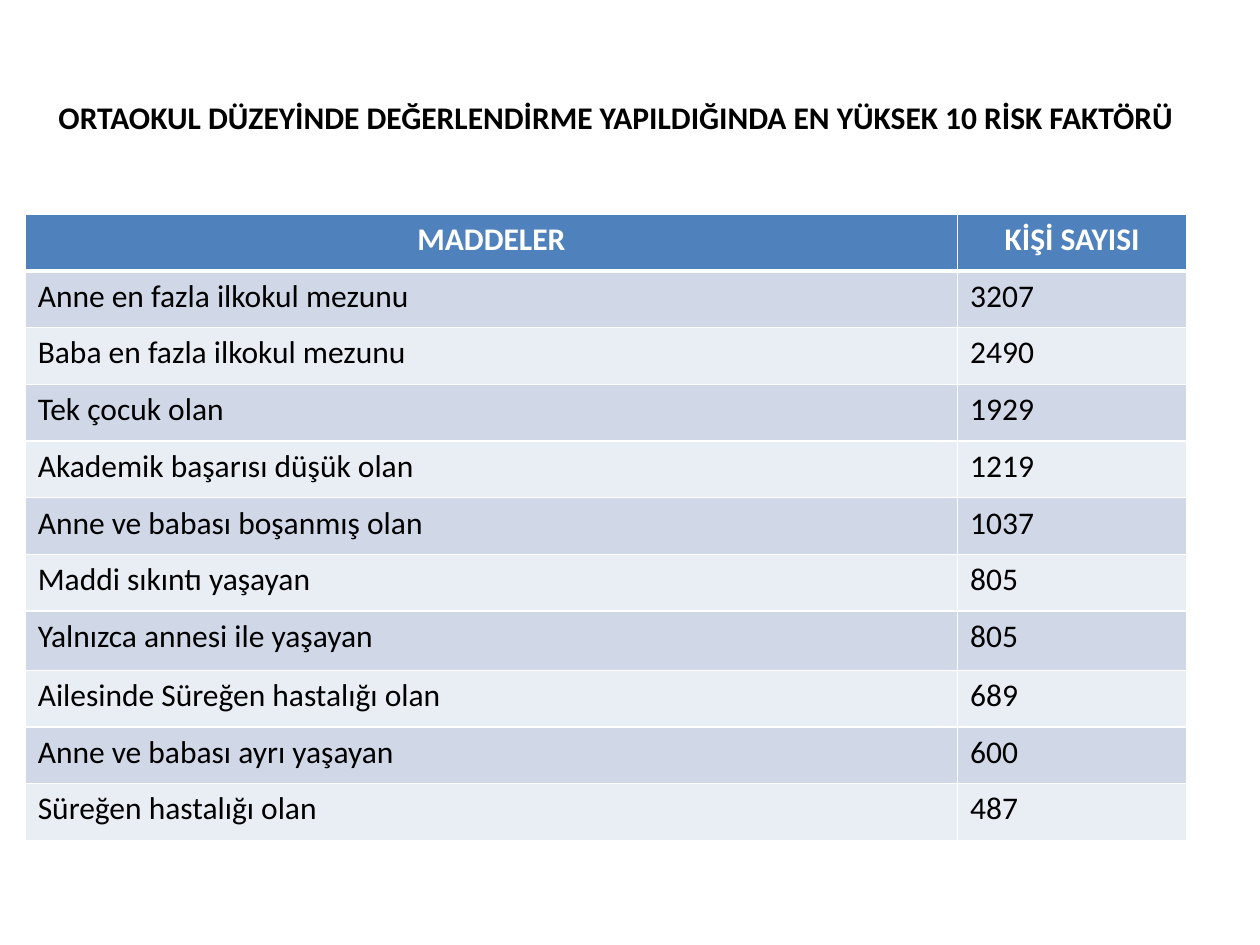
from dataclasses import dataclass

from lxml import etree
from pptx import Presentation
from pptx.dml.color import RGBColor
from pptx.enum import text
from pptx.oxml import ns
from pptx.util import Emu, Pt

EMU_PER_PX = 9144  # 100 px to the inch

WHITE = RGBColor(0xFF, 0xFF, 0xFF)
BLACK = RGBColor(0x00, 0x00, 0x00)
HEADER_BLUE = RGBColor(0x4F, 0x81, 0xBD)
BAND_DARK = RGBColor(0xD0, 0xD8, 0xE8)
BAND_LIGHT = RGBColor(0xE9, 0xED, 0xF4)

FONT = "Calibri"
TITLE = "ORTAOKUL DÜZEYİNDE DEĞERLENDİRME YAPILDIĞINDA EN YÜKSEK 10 RİSK FAKTÖRÜ"
HEADINGS = ("MADDELER", "KİŞİ SAYISI")
COLUMN_WIDTHS = (740, 182)
ROW_HEIGHT = 45


@dataclass(frozen=True)
class RiskFactor:
    label: str
    people: int
    height: int = ROW_HEIGHT


RISK_FACTORS = (
    RiskFactor("Anne en fazla ilkokul mezunu", 3207),
    RiskFactor("Baba en fazla ilkokul mezunu", 2490),
    RiskFactor("Tek çocuk olan", 1929),
    RiskFactor("Akademik başarısı düşük olan", 1219),
    RiskFactor("Anne ve babası boşanmış olan", 1037),
    RiskFactor("Maddi sıkıntı yaşayan", 805),
    RiskFactor("Yalnızca annesi ile yaşayan", 805, height=47),
    RiskFactor("Ailesinde Süreğen hastalığı olan", 689),
    RiskFactor("Anne ve babası ayrı yaşayan", 600),
    RiskFactor("Süreğen hastalığı olan", 487),
)


def px(length: int) -> Emu:
    return Emu(length * EMU_PER_PX)


def write(frame, words: str, *, size: int = 18, color: RGBColor = BLACK,
          bold: bool = False, align=text.PP_ALIGN.LEFT) -> None:
    paragraph = frame.paragraphs[0]
    paragraph.alignment = align
    run = paragraph.add_run()
    run.text = words
    run.font.name = FONT
    run.font.size = Pt(size)
    run.font.bold = bold
    run.font.color.rgb = color


def set_borders(cell, bottom: int = 1) -> None:
    """Draw white borders of 1 pt, with the bottom one as wide as given."""
    properties = cell._tc.get_or_add_tcPr()
    widths = {"a:lnL": 1, "a:lnR": 1, "a:lnT": 1, "a:lnB": bottom}
    for position, (side, width) in enumerate(widths.items()):
        line = etree.Element(ns.qn(side), w=str(Pt(width)))
        fill = etree.SubElement(line, ns.qn("a:solidFill"))
        etree.SubElement(fill, ns.qn("a:srgbClr"), val=str(WHITE))
        properties.insert(position, line)


def fill_cell(cell, words: str, fill: RGBColor, *, bottom: int = 1, **style) -> None:
    cell.fill.solid()
    cell.fill.fore_color.rgb = fill
    set_borders(cell, bottom)
    write(cell.text_frame, words, **style)


def add_title(slide) -> None:
    title = slide.shapes.add_textbox(px(28), px(30), px(922), px(125))
    frame = title.text_frame
    frame.word_wrap = True
    frame.vertical_anchor = text.MSO_ANCHOR.MIDDLE
    write(frame, TITLE, bold=True, align=text.PP_ALIGN.CENTER)


def add_risk_table(slide) -> None:
    heights = [ROW_HEIGHT, *(factor.height for factor in RISK_FACTORS)]
    table = slide.shapes.add_table(
        len(heights), len(COLUMN_WIDTHS),
        px(20), px(170), px(sum(COLUMN_WIDTHS)), px(sum(heights))).table
    for column, width in zip(table.columns, COLUMN_WIDTHS):
        column.width = px(width)
    for row, height in zip(table.rows, heights):
        row.height = px(height)

    for column, heading in enumerate(HEADINGS):
        fill_cell(table.cell(0, column), heading, HEADER_BLUE, bottom=3,
                  color=WHITE, bold=True, align=text.PP_ALIGN.CENTER)
    for row, factor in enumerate(RISK_FACTORS, start=1):
        band = BAND_DARK if row % 2 else BAND_LIGHT
        for column, words in enumerate((factor.label, str(factor.people))):
            fill_cell(table.cell(row, column), words, band)


def main() -> None:
    deck = Presentation()
    deck.slide_width, deck.slide_height = px(1000), px(750)
    slide = deck.slides.add_slide(deck.slide_layouts[6])
    add_risk_table(slide)
    add_title(slide)
    deck.save("out.pptx")


if __name__ == "__main__":
    main()
